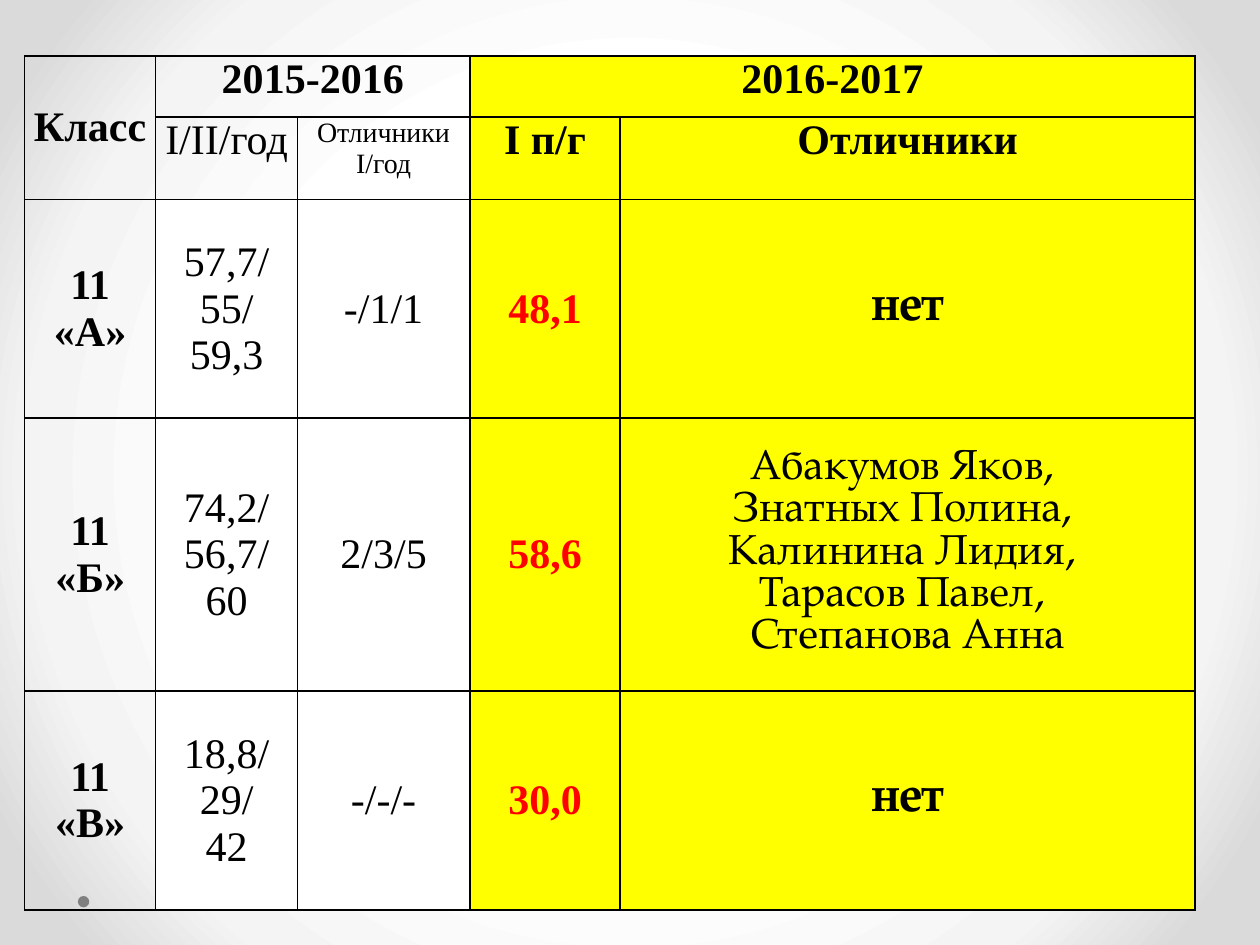
from dataclasses import dataclass

from lxml import etree
from pptx import Presentation
from pptx.dml.color import RGBColor
from pptx.enum.shapes import MSO_SHAPE
from pptx.enum.text import MSO_ANCHOR, PP_ALIGN
from pptx.oxml import parse_xml
from pptx.oxml.ns import qn
from pptx.util import Pt

OVAL = MSO_SHAPE.OVAL
TOP, MIDDLE = MSO_ANCHOR.TOP, MSO_ANCHOR.MIDDLE
CENTER = PP_ALIGN.CENTER
NS = 'xmlns:a="http://schemas.openxmlformats.org/drawingml/2006/main"'


@dataclass(frozen=True)
class Theme:
    """Colours, fonts and type sizes of the slide."""
    ink: str = "000000"
    accent: str = "FF0000"
    white: str = "FFFFFF"
    current: str = "FFFF00"
    dot: str = "808080"
    glow: tuple = ((50, "FFFFFF"), (76, "F4F4F4"), (92, "DADADA"))
    serif: str = "Times New Roman"
    display: str = "TeX Gyre Pagella"
    small: int = 16
    body: int = 24
    large: int = 28


class Deck:
    """Holds the theme and the current slide."""

    def __init__(self, prs, theme):
        self.theme = theme
        self.s = prs.slides.add_slide(prs.slide_layouts[6])

    def background(self):
        fill = self.s.background.fill
        fill.gradient()
        stops = "".join(
            f'<a:gs pos="{pos * 1000}"><a:srgbClr val="{color}"/></a:gs>'
            for pos, color in self.theme.glow)
        grad = next(self.s.element.iter(qn("a:gradFill")))
        grad.getparent().replace(grad, parse_xml(
            f'<a:gradFill {NS} rotWithShape="1"><a:gsLst>{stops}</a:gsLst>'
            '<a:path path="circle"><a:fillToRect l="50000" t="50000" '
            'r="50000" b="50000"/></a:path></a:gradFill>'))

    def dot(self, x, y, size):
        sp = self.s.shapes.add_shape(OVAL, Pt(x), Pt(y), Pt(size), Pt(size))
        sp.shadow.inherit = False
        sp.fill.solid()
        sp.fill.fore_color.rgb = RGBColor.from_string(self.theme.dot)
        sp.line.fill.background()

    def table(self, x, y, cols, rows):
        frame = self.s.shapes.add_table(
            len(rows), len(cols), Pt(x), Pt(y), Pt(sum(cols)), Pt(sum(rows)))
        table = frame.table
        table.first_row = table.horz_banding = False
        for col, width in zip(table.columns, cols):
            col.width = Pt(width)
        for row, height in zip(table.rows, rows):
            row.height = Pt(height)
        return table

    def cell(self, cell, fill, lines, anchor, **style):
        margins = {"margin_left": Pt(5), "margin_right": Pt(5),
                   "margin_top": 0, "margin_bottom": 0}
        for name, value in {**margins, "vertical_anchor": anchor}.items():
            setattr(cell, name, value)
        self.borders(cell)
        if fill:
            cell.fill.solid()
            cell.fill.fore_color.rgb = RGBColor.from_string(fill)
        else:
            cell.fill.background()
        tf = cell.text_frame
        for i, line in enumerate(lines):
            p = tf.add_paragraph() if i else tf.paragraphs[0]
            p.alignment = CENTER
            self.run(p, line, **style)

    def run(self, p, text, size=None, bold=False, color=None, font=None):
        r = p.add_run()
        r.text = text
        values = {"name": font or self.theme.serif,
                  "size": Pt(size or self.theme.body), "bold": bold}
        for name, value in values.items():
            setattr(r.font, name, value)
        r.font.color.rgb = RGBColor.from_string(color or self.theme.ink)

    def borders(self, cell):
        pr = cell._tc.get_or_add_tcPr()
        for side in ("a:lnL", "a:lnR", "a:lnT", "a:lnB"):
            ln = etree.SubElement(pr, qn(side), w=str(Pt(1)))
            fill = etree.SubElement(ln, qn("a:solidFill"))
            etree.SubElement(fill, qn("a:srgbClr"), val=self.theme.ink)


def main():
    prs = Presentation()
    prs.slide_width, prs.slide_height = Pt(720), Pt(540)
    theme = Theme()
    deck = Deck(prs, theme)
    deck.background()
    deck.dot(44.5, 512, 6.5)
    table = deck.table(14, 32, [75, 81, 98.5, 86, 328.5],
                       [35, 47, 125, 156, 125])

    bold = {"bold": True}
    score = {"bold": True, "color": theme.accent}
    none = (["нет"], {"bold": True, "size": theme.large, "font": theme.display})
    names = (["Абакумов Яков, ", "Знатных Полина, ", "Калинина Лидия, ",
              "Тарасов Павел, ", "Степанова Анна"], {"font": theme.display})
    empty = ([], {})
    grid = [
        [(["Класс"], bold), (["2015-2016"], bold), empty,
         (["2016-2017"], bold), empty],
        [empty, (["I/II/год"], {}),
         (["Отличники", "I/год"], {"size": theme.small}),
         (["I п/г"], bold), (["Отличники"], bold)],
    ]
    classes = [
        ("11 «А»", ["57,7/", "55/", "59,3"], "-/1/1", "48,1", none),
        ("11 «Б»", ["74,2/", "56,7/", "60"], "2/3/5", "58,6", names),
        ("11 «В»", ["18,8/", "29/", "42"], "-/-/-", "30,0", none),
    ]
    for label, quality, honours, result, pupils in classes:
        grid.append([([label], bold), (quality, {}), ([honours], {}),
                     ([result], score), pupils])

    for first, last in (((0, 0), (1, 0)), ((0, 1), (0, 2)), ((0, 3), (0, 4))):
        table.cell(*first).merge(table.cell(*last))
    for i, row in enumerate(grid):
        for j, (lines, style) in enumerate(row):
            past = theme.white if i > 1 and j else None
            fill = theme.current if j > 2 else past
            anchor = MIDDLE if i > 1 or j == 0 else TOP
            deck.cell(table.cell(i, j), fill, lines, anchor, **style)
    prs.save("out.pptx")


if __name__ == "__main__":
    main()
